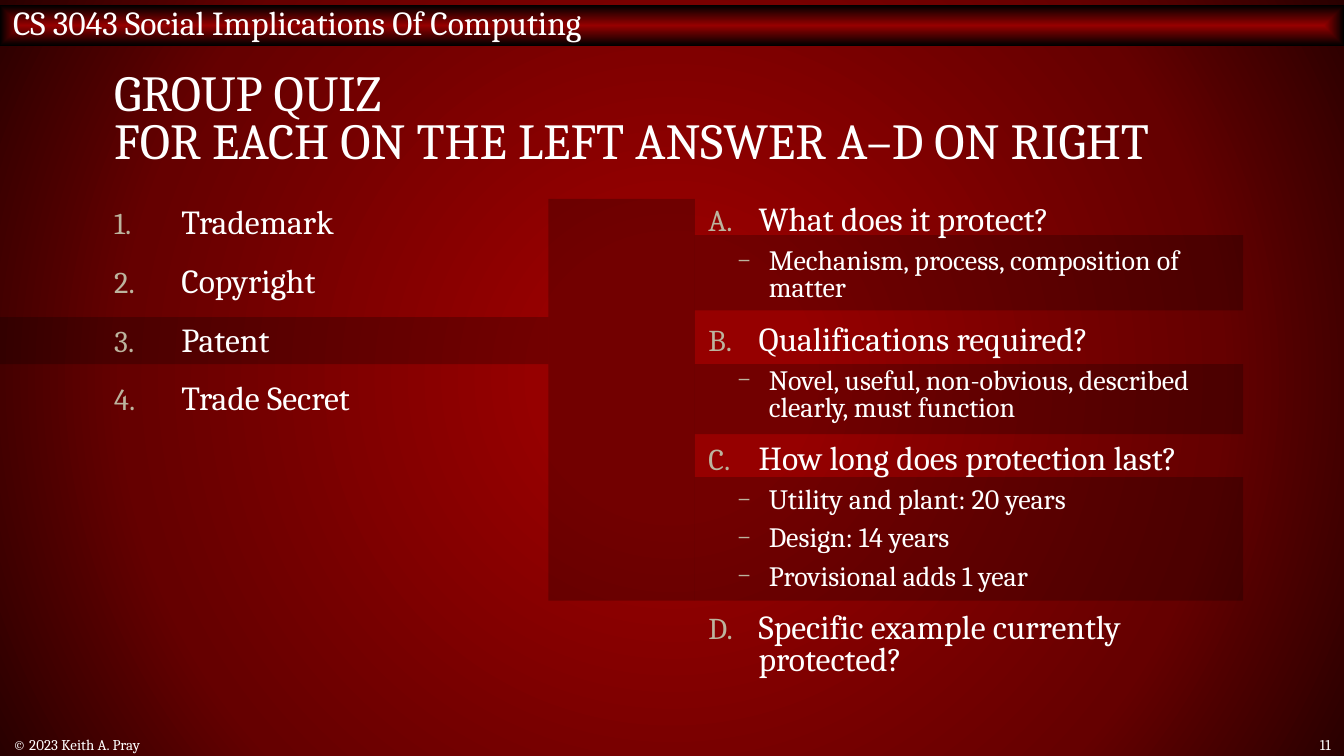
"""Build the group quiz slide on patents."""
from lxml.etree import SubElement
from pptx import Presentation
from pptx.dml.color import RGBColor
from pptx.enum.shapes import MSO_SHAPE
from pptx.enum.text import MSO_ANCHOR, MSO_AUTO_SIZE, PP_ALIGN
from pptx.oxml.ns import qn
from pptx.util import Pt

WHITE = RGBColor(255, 255, 255)
BLACK = RGBColor(0, 0, 0)
RED = RGBColor(0x96, 0, 0)
DARK = RGBColor(0x65, 0, 0)
DEEP = RGBColor(0x29, 0, 0)
SAND = RGBColor(0xBC, 0xB4, 0x9E)
FONT = "Cambria"
WIDE, HIGH = 720, 405

COURSE = "CS 3043 Social Implications Of Computing"
TITLE = "GROUP QUIZ\vFOR EACH ON THE LEFT ANSWER A–D ON RIGHT"
TERMS = ["Trademark", "Copyright", "Patent", "Trade Secret"]
QUIZ = [
    ("What does it protect?", ["Mechanism, process, composition of matter"]),
    ("Qualifications required?",
     ["Novel, useful, non-obvious, described clearly, must function"]),
    ("How long does protection last?",
     ["Utility and plant: 20 years", "Design: 14 years", "Provisional adds 1 year"]),
    ("Specific example currently protected?", []),
]
CREDIT, PAGE = "© 2023 Keith A. Pray", "11"

EDGE, TOP, COL, BODY = 54, 106.56, 293.76, 264.24
RIGHT = WIDE - EDGE - COL
BANDS = [(126, 40.32), (195.12, 37.44), (255.6, 66.24)]
END = sum(BANDS[-1])
PANELS = [(0, 169.92, COL, 25.2), (COL, TOP, RIGHT - COL, END - TOP)]
PANELS += [(RIGHT, y, COL, h) for y, h in BANDS]

TERM = dict(size=18, left=36, hang=36, lead=0.9, gap=12, mark="arabicPeriod")
ASK = dict(size=18, left=27, hang=27, lead=0.8, gap=12, mark="alphaUcPeriod")
REPLY = dict(size=15, left=32.4, hang=16.5, lead=0.8, gap=6, mark="–", level=1)


def style(item, values):
    for name, value in values.items():
        setattr(item, name, value)


def place(shape, x, y, w, h):
    style(shape, dict(left=Pt(x), top=Pt(y), width=Pt(w), height=Pt(h)))
    return shape


def write(para, text, size):
    para.text = text
    for run in para.runs:
        style(run.font, dict(name=FONT, size=Pt(size), bold=False))
        run.font.color.rgb = WHITE


def frame(shape, anchor):
    text = shape.text_frame
    style(text, dict(word_wrap=True, auto_size=MSO_AUTO_SIZE.NONE,
                     vertical_anchor=anchor))
    return text


def line(shape, text, size, align=PP_ALIGN.LEFT):
    para = frame(shape, MSO_ANCHOR.MIDDLE).paragraphs[0]
    para.alignment = align
    write(para, text, size)
    return para


def bullet(para, form):
    props = para._p.get_or_add_pPr()
    props.set("marL", str(Pt(form["left"])))
    props.set("indent", str(-Pt(form["hang"])))
    tint = SubElement(props, qn("a:buClr"))
    SubElement(tint, qn("a:srgbClr"), val=str(SAND))
    SubElement(props, qn("a:buSzPct"), val="90000")
    SubElement(props, qn("a:buFont"), typeface=FONT)
    mark = form["mark"]
    if len(mark) == 1:
        SubElement(props, qn("a:buChar"), char=mark)
    else:
        SubElement(props, qn("a:buAutoNum"), type=mark)


def fill_list(shape, rows):
    text = frame(shape, MSO_ANCHOR.TOP)
    for i, (words, form) in enumerate(rows):
        para = text.add_paragraph() if i else text.paragraphs[0]
        style(para, dict(level=form.get("level", 0), line_spacing=form["lead"],
                         space_before=Pt(form["gap"] if i else 0),
                         space_after=Pt(0), alignment=PP_ALIGN.LEFT))
        bullet(para, form)
        write(para, words, form["size"])


def blend(holder, path, stops):
    solid = holder.find(qn("a:solidFill"))
    grad = holder.makeelement(qn("a:gradFill"), {"rotWithShape": "1"})
    marks = SubElement(grad, qn("a:gsLst"))
    for pos, color in stops:
        stop = SubElement(marks, qn("a:gs"), pos=str(pos * 1000))
        SubElement(stop, qn("a:srgbClr"), val=str(color))
    way = SubElement(grad, qn("a:path"), path=path)
    SubElement(way, qn("a:fillToRect"), dict.fromkeys("ltrb", "50000"))
    holder.replace(solid, grad)


def block(slide, x, y, w, h):
    shape = slide.shapes.add_shape(MSO_SHAPE.RECTANGLE, Pt(x), Pt(y), Pt(w), Pt(h))
    shape.shadow.inherit = False
    shape.line.fill.background()
    shape.fill.solid()
    shape.fill.fore_color.rgb = BLACK
    return shape


def label(slide, text, x, w, align):
    box = slide.shapes.add_textbox(Pt(x), Pt(393.12), Pt(w), Pt(11.52))
    line(box, text, 8, align)


def main():
    deck = Presentation()
    style(deck, dict(slide_width=Pt(WIDE), slide_height=Pt(HIGH)))
    slide = deck.slides.add_slide(deck.slide_layouts[3])
    slide.background.fill.solid()
    blend(slide._element.find(".//" + qn("p:bgPr")), "circle",
          [(17, RED), (71, DARK), (100, DEEP)])

    bar = block(slide, 0, 2.88, WIDE, 21.6)
    blend(bar._element.spPr, "rect", [(0, RED), (100, BLACK)])
    line(bar, COURSE, 18)
    style(bar.text_frame, dict(margin_top=0, margin_bottom=Pt(3.6)))
    for spot in PANELS:
        panel = block(slide, *spot)
        color = panel._element.spPr.find(".//" + qn("a:srgbClr"))
        SubElement(color, qn("a:alpha"), val="24000")

    title, left, right = list(slide.placeholders)
    for shape in (title, right, left):
        slide.shapes._spTree.append(shape._element)
    place(title, EDGE, 28.8, WIDE - 2 * EDGE, 72)
    line(title, TITLE, 27).line_spacing = 0.8
    fill_list(place(left, EDGE, TOP, COL, BODY), [(term, TERM) for term in TERMS])
    rows = []
    for ask, replies in QUIZ:
        rows += [(ask, ASK)] + [(reply, REPLY) for reply in replies]
    fill_list(place(right, RIGHT, TOP, COL, BODY), rows)
    label(slide, CREDIT, 0, 437.76, PP_ALIGN.LEFT)
    label(slide, PAGE, 671.04, 48.96, PP_ALIGN.RIGHT)
    deck.save("out.pptx")


if __name__ == "__main__":
    main()
